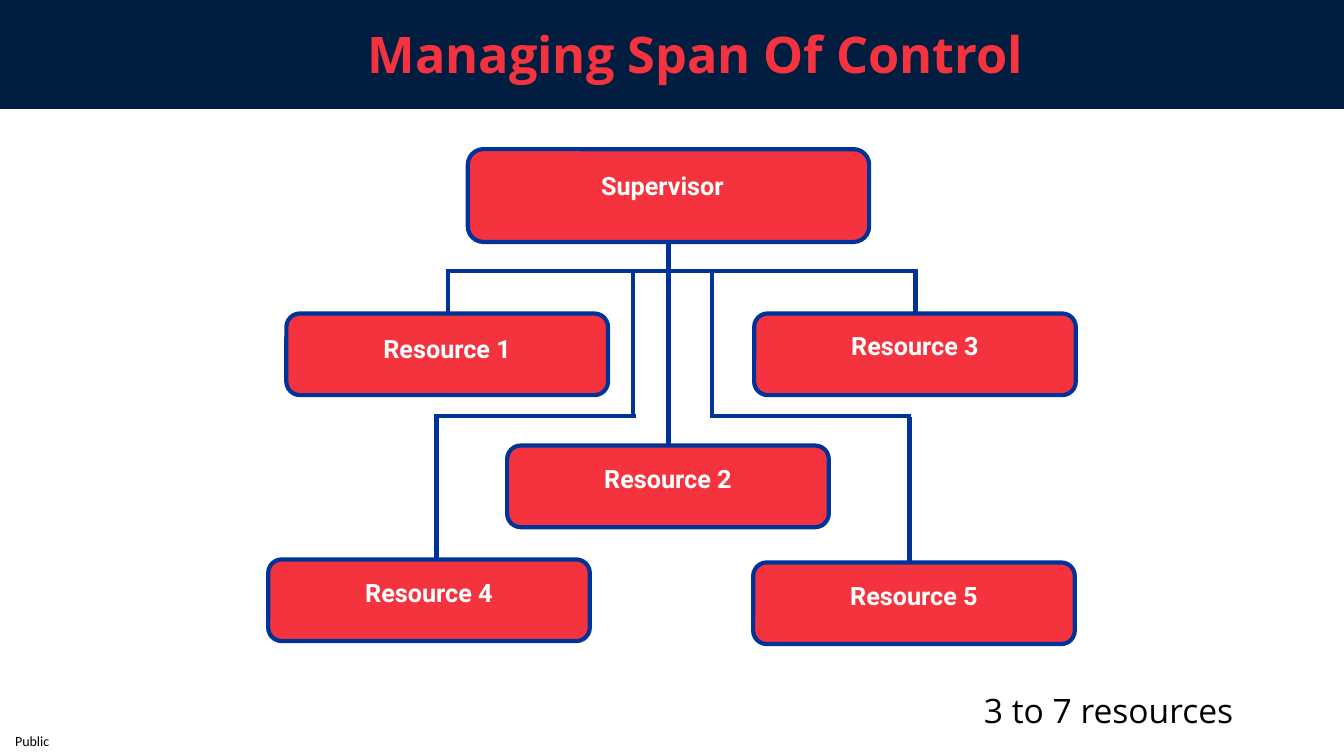
from pptx import Presentation, util as u
from pptx.dml.color import RGBColor
from pptx.enum import shapes, text
from pptx.oxml.ns import qn
from lxml import etree

RED, BLUE, NAVY, WHITE, BLACK = "F5333F", "003399", "011E41", "FFFFFF", "000000"
SIZE = 3.19, 0.81
TOP = "Supervisor", 4.64, 1.48, 3.98, 0.92, 4.74, 1.64, 3.66
TEAM = [
    ("Resource 1", 2.84, 3.11, 0.15),
    ("Resource 3", 7.48, 3.11, 0.12),
    ("Resource 2", 5.03, 4.42, 0.13),
    ("Resource 4", 2.66, 5.55, 0.13),
    ("Resource 5", 7.47, 5.58, 0.13),
]
LINES = [
    (9.08, 2.67, 9.08, 3.25),
    (4.44, 2.67, 4.44, 3.25),
    (6.63, 2.11, 6.63, 4.74),
    (4.44, 2.69, 9.06, 2.69),
    (6.28, 2.69, 6.28, 4.12),
    (6.31, 4.13, 4.3, 4.13),
    (4.33, 4.14, 4.33, 5.78),
    (7.06, 2.68, 7.06, 4.12),
    (9.04, 4.13, 7.04, 4.13),
    (9.02, 4.14, 9.02, 5.78),
]

deck = Presentation()
deck.slide_width, deck.slide_height = u.Inches(13.33), u.Inches(7.5)
slide = deck.slides.add_slide(deck.slide_layouts[6])


def color(code):
    return RGBColor.from_string(code)


def inches(*nums):
    return [u.Inches(n) for n in nums]


def block(kind, place, fill, edge=None):
    box = slide.shapes.add_shape(kind, *inches(*place))
    box.shadow.inherit = False
    box.fill.solid()
    box.fill.fore_color.rgb = color(fill)
    if edge:
        box.line.color.rgb = color(edge)
        box.line.width = u.Pt(3)
    else:
        box.line.fill.background()


def write(words, place, size, face, ink, bold=False, center=False, middle=False):
    frame = slide.shapes.add_textbox(*inches(*place)).text_frame
    frame.word_wrap = True
    if middle:
        frame.vertical_anchor = text.MSO_ANCHOR.MIDDLE
    para = frame.paragraphs[0]
    para.text = words
    para.alignment = text.PP_ALIGN.CENTER if center else text.PP_ALIGN.LEFT
    font = para.font
    font.size, font.name, font.bold = u.Pt(size), face, bold
    font.color.rgb = color(ink)
    return frame


def card(words, place, label):
    block(shapes.MSO_SHAPE.ROUNDED_RECTANGLE, place, RED, BLUE)
    write(words, label, 18, "Roboto", WHITE, bold=True, center=True)


block(shapes.MSO_SHAPE.RECTANGLE, (-0.02, -0.01, 13.35, 1.09), NAVY)
write("Managing Span Of Control", (0.6, 0.33, 12.6, 0.39), 36, "Open Sans", RED,
      bold=True, center=True, middle=True)

for ends in LINES:
    line = slide.shapes.add_connector(shapes.MSO_CONNECTOR.STRAIGHT, *inches(*ends))
    line.line.color.rgb = color(BLUE)
    line.line.width = u.Pt(3)
    etree.SubElement(line._element.spPr, qn("a:effectLst"))

name, x, y, w, h, left, top, wide = TOP
card(name, (x, y, w, h), (left, top, wide, 0.41))
for name, x, y, drop in TEAM:
    card(name, (x, y, *SIZE), (x - 0.24, y + drop, 3.67, 0.41))

write("3 to 7 resources", (9.66, 6.8, 3.44, 0.5), 24, "Open Sans", BLACK)
mark = write("Public", (0, 7.21, 0.64, 0.29), 10, "Calibri", BLACK, middle=True)
mark.margin_left = u.Inches(0.15)
mark.margin_right = mark.margin_top = mark.margin_bottom = 0

deck.save("out.pptx")
